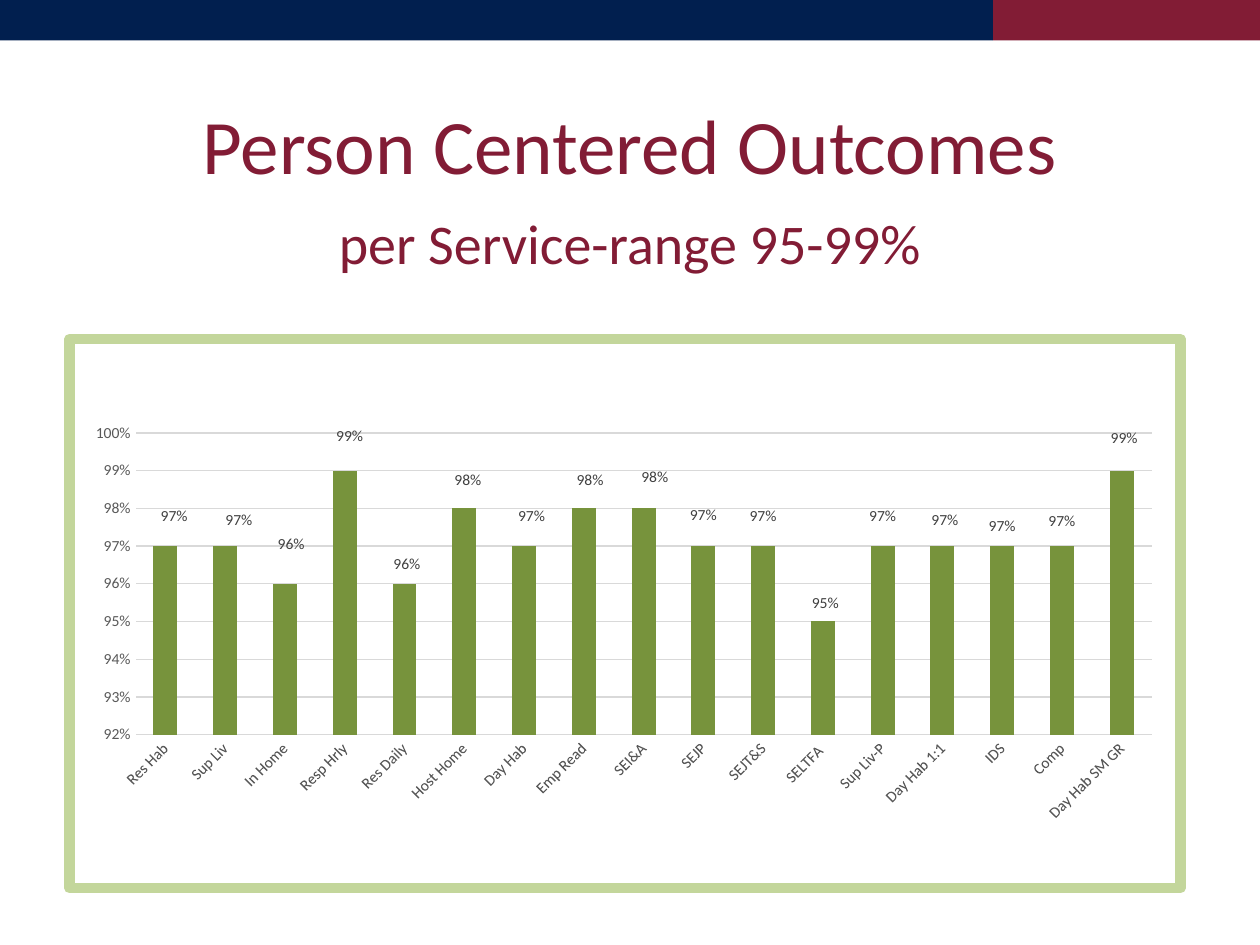
from lxml import etree
from pptx import Presentation
from pptx import util as u
from pptx.chart.data import CategoryChartData
from pptx.dml.color import RGBColor
from pptx.enum import chart as charts, shapes, text
from pptx.oxml import parse_xml
from pptx.oxml.ns import nsdecls, qn

COLORS = {"navy": "011F4F", "maroon": "821C35", "bar": "77933C", "frame": "C3D69B",
          "grid": "D9D9D9", "axis": "595959", "label": "404040", "white": "FFFFFF",
          "black": "000000"}
FONT = "Calibri"
TITLE = [("Person Centered Outcomes", 44), ("per Service-range 95-99%", 32)]
BANDS = [(7.88, 2.12, "maroon"), (0, 7.88, "navy")]  # left, width, colour

# service, outcome, label shift to the right and lift above the bar (inches)
OUTCOMES = [
    ("Res Hab", 0.97, 0.07, 0.24), ("Sup Liv", 0.97, 0.11, 0.21),
    ("In Home", 0.96, 0.05, 0.32), ("Resp Hrly", 0.99, 0.04, 0.28),
    ("Res Daily", 0.96, 0.02, 0.16), ("Host Home", 0.98, 0.03, 0.23),
    ("Day Hab", 0.97, 0.06, 0.24), ("Emp Read", 0.98, 0.05, 0.23),
    ("SEI&A", 0.98, 0.09, 0.25), ("SEJP", 0.97, 0, 0.25),
    ("SEJT&S", 0.97, 0, 0.24), ("SELTFA ", 0.95, 0.02, 0.15),
    ("Sup Liv-P", 0.97, 0, 0.24), ("Day Hab 1:1", 0.97, 0.02, 0.21),
    ("IDS", 0.97, 0, 0.16), ("Comp", 0.97, 0, 0.20),
    ("Day Hab SM GR", 0.99, 0.02, 0.26),
]
CHART_LEFT, CHART_TOP, CHART_WIDTH, CHART_HEIGHT = 0.51, 2.65, 8.9, 4.44
PLOT_LEFT, PLOT_TOP, PLOT_WIDTH, PLOT_HEIGHT = 0.53, 0.76, 8.14, 2.44  # inside the chart
AXIS_MIN, AXIS_MAX = 0.92, 1.0


def color(name):
    return RGBColor.from_string(COLORS[name])


def style(font, size, name):
    font.name = FONT
    font.size = u.Pt(size)
    font.color.rgb = color(name)


def manual_layout(x, y, size=None):
    """Layout element, from inches to fractions of the chart's size."""
    layout = parse_xml(f"<c:layout {nsdecls('c')}><c:manualLayout/></c:layout>")
    settings = [("x", x / CHART_WIDTH), ("y", y / CHART_HEIGHT)]
    if size:
        settings = [("layoutTarget", "inner"), ("xMode", "edge"), ("yMode", "edge"), *settings,
                    ("w", size[0] / CHART_WIDTH), ("h", size[1] / CHART_HEIGHT)]
    for tag, value in settings:
        etree.SubElement(layout[0], qn("c:" + tag)).set("val", str(value))
    return layout


deck = Presentation()
deck.slide_width, deck.slide_height = u.Inches(10), u.Inches(7.5)
page = deck.slides.add_slide(deck.slide_layouts[6])

# Top bands
for left, width, name in BANDS:
    band = page.shapes.add_shape(shapes.MSO_SHAPE.RECTANGLE, u.Inches(left), 0,
                                 u.Inches(width), u.Inches(0.32))
    band.shadow.inherit = False
    band.fill.solid()
    band.fill.fore_color.rgb = color(name)
    band.line.fill.background()

# Title
box = page.shapes.add_textbox(u.Inches(1), u.Inches(0.83), u.Inches(8), u.Inches(0.73))
frame = box.text_frame
frame.word_wrap = True
frame.margin_left = frame.margin_right = frame.margin_top = frame.margin_bottom = 0
para = frame.paragraphs[0]
para.text = "\v".join(line for line, _ in TITLE)
para.alignment = text.PP_ALIGN.CENTER
para.line_spacing = u.Pt(49)
for span, (_, size) in zip(para.runs, TITLE):
    style(span.font, size, "maroon")

# Chart
data = CategoryChartData(number_format="0%")
data.categories = [service for service, *_ in OUTCOMES]
data.add_series("Series 1", [value for _, value, *_ in OUTCOMES])
chart = page.shapes.add_chart(
    charts.XL_CHART_TYPE.COLUMN_STACKED, u.Inches(CHART_LEFT), u.Inches(CHART_TOP),
    u.Inches(CHART_WIDTH), u.Inches(CHART_HEIGHT), data).chart
chart.has_legend = chart.has_title = False
style(chart.font, 10, "black")
plot = chart.plots[0]
plot.gap_width, plot.overlap, plot.vary_by_categories = 150, 100, False
series = plot.series[0]
series.format.fill.solid()
series.format.fill.fore_color.rgb = color("bar")

# Axes
for axis in (chart.category_axis, chart.value_axis):
    axis.major_tick_mark = axis.minor_tick_mark = charts.XL_TICK_MARK.NONE
    axis.format.line.fill.background()
    style(axis.tick_labels.font, 9, "axis")
chart.category_axis._element.find(qn("c:txPr")).find(qn("a:bodyPr")).set("rot", "-2700000")
scale = chart.value_axis
scale.minimum_scale, scale.maximum_scale, scale.major_unit = AXIS_MIN, AXIS_MAX, 0.01
scale.tick_labels.number_format = "0%"
scale.tick_labels.number_format_is_linked = False
scale.has_major_gridlines = True
grid = scale.major_gridlines.format.line
grid.color.rgb = color("grid")
grid.width = u.Pt(0.75)

# Plot position and chart frame
area = chart._chartSpace.find(qn("c:chart")).find(qn("c:plotArea"))
for layout in area.findall(qn("c:layout")):
    area.remove(layout)
area.insert(0, manual_layout(PLOT_LEFT, PLOT_TOP, (PLOT_WIDTH, PLOT_HEIGHT)))
chart._chartSpace.find(qn("c:chart")).addnext(parse_xml(
    f'<c:spPr {nsdecls("c", "a")}>'
    f'<a:solidFill><a:srgbClr val="{COLORS["white"]}"/></a:solidFill>'
    f'<a:ln w="{u.Pt(6)}"><a:solidFill><a:srgbClr val="{COLORS["frame"]}"/></a:solidFill>'
    '<a:round/></a:ln></c:spPr>'))

# Data labels, moved from the middle of each bar to above it
labels = series.data_labels
labels.show_value = True
labels.number_format = "0%"
labels.number_format_is_linked = False
style(labels.font, 9, "label")
for index, (_, value, shift, lift) in enumerate(OUTCOMES):
    style(series.points[index].data_label.font, 9, "label")
    half_bar = (value - AXIS_MIN) / (AXIS_MAX - AXIS_MIN) * PLOT_HEIGHT / 2
    label = labels._element.findall(qn("c:dLbl"))[index]
    label.find(qn("c:idx")).addnext(manual_layout(shift, -half_bar - lift))

# No leader lines to the moved labels
for leader in labels._element.findall(qn("c:showLeaderLines")):
    labels._element.remove(leader)
etree.SubElement(labels._element, qn("c:showLeaderLines")).set("val", "0")
labels._element.append(parse_xml(
    f'<c:extLst {nsdecls("c")}><c:ext uri="{{CE6537A1-D6FC-4f65-9D91-7224C49458BB}}" '
    'xmlns:c15="http://schemas.microsoft.com/office/drawing/2012/chart">'
    '<c15:showLeaderLines val="0"/></c:ext></c:extLst>'))

deck.save("out.pptx")
